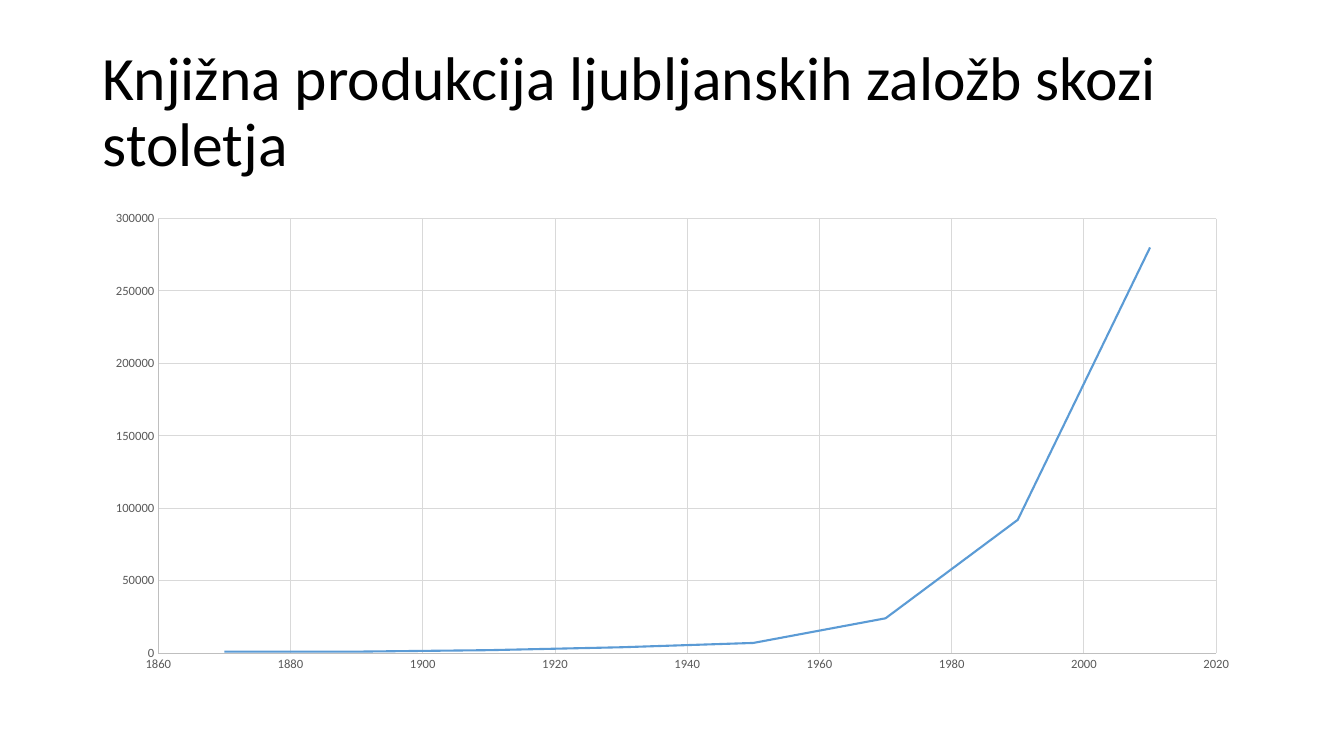
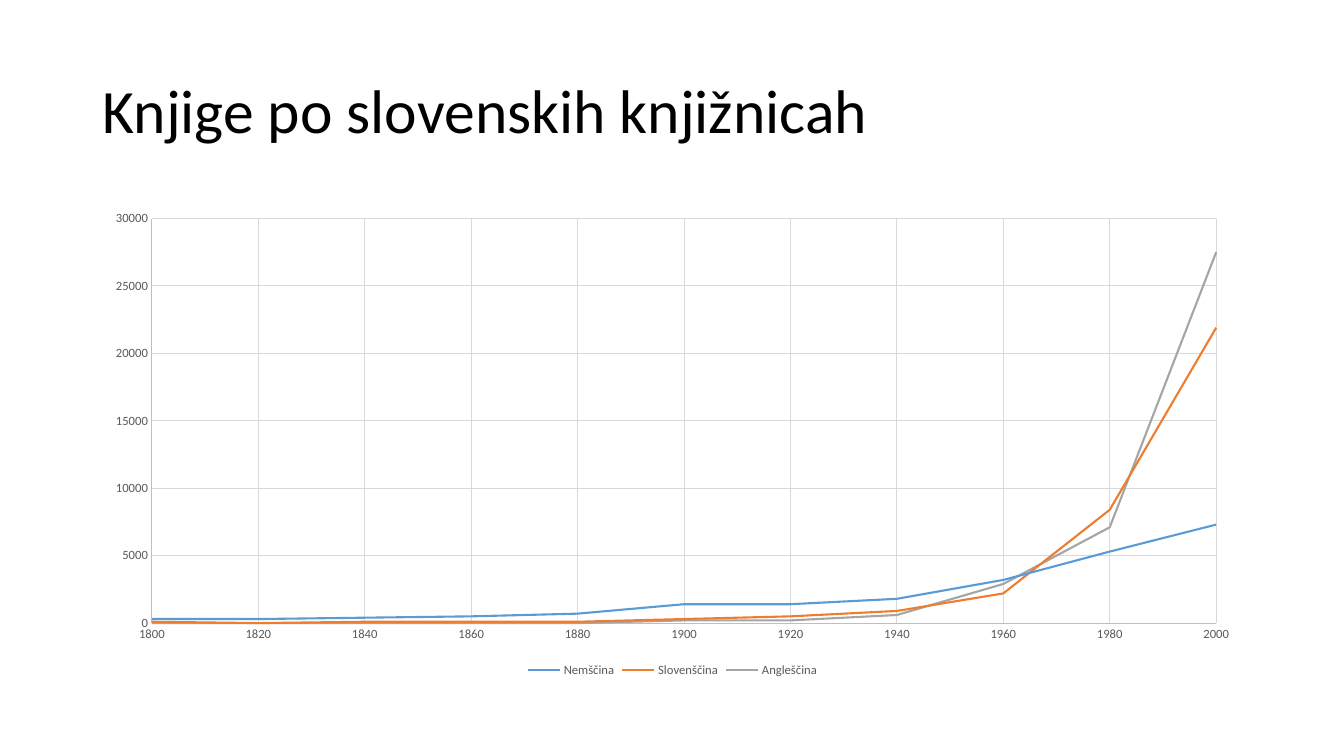
from pptx import Presentation
from pptx.chart.data import XyChartData
from pptx.dml.color import RGBColor
from pptx.enum.chart import XL_CHART_TYPE, XL_LEGEND_POSITION, XL_TICK_MARK
from pptx.enum.text import MSO_ANCHOR
from pptx.util import Inches, Pt

SMOOTH_LINES = XL_CHART_TYPE.XY_SCATTER_SMOOTH_NO_MARKERS
BOTTOM = XL_LEGEND_POSITION.BOTTOM
NO_TICK = XL_TICK_MARK.NONE
MIDDLE = MSO_ANCHOR.MIDDLE

COLORS = {
    "title": "000000", "label": "595959", "axis": "BFBFBF", "grid": "D9D9D9",
    "blue": "5B9BD5", "orange": "ED7D31", "gray": "A5A5A5",
}
SERIES_COLORS = ("blue", "orange", "gray")
FONT = "Calibri"
LEFT, WIDTH = 0.92, 11.5

PRODUCTION = {
    "Series 1": (1000, 1000, 2000, 4000, 7000, 24000, 92000, 280000),
}
LIBRARIES = {
    "Nemščina": (300, 300, 400, 500, 700, 1400, 1400, 1800, 3200, 5300, 7300),
    "Slovenščina": (100, 0, 100, 100, 100, 300, 500, 900, 2200, 8400, 21900),
    "Angleščina": (0, 0, 0, 0, 0, 200, 200, 600, 2900, 7100, 27500),
}


def set_attrs(obj, **values):
    for name, value in values.items():
        setattr(obj, name, value)


class Deck:
    """Holds the shared style and the slide being built."""

    def __init__(self):
        self.prs = Presentation()
        set_attrs(self.prs, slide_width=Inches(13.33), slide_height=Inches(7.5))
        self.slide = None

    def add_slide(self, title):
        self.slide = self.prs.slides.add_slide(self.prs.slide_layouts[6])
        self.title(title)

    def font(self, font, size, color):
        set_attrs(font, name=FONT, size=Pt(size))
        font.color.rgb = RGBColor.from_string(COLORS[color])

    def line(self, fmt, color, width=0.75):
        fmt.line.color.rgb = RGBColor.from_string(COLORS[color])
        fmt.line.width = Pt(width)

    def title(self, text):
        sp = self.slide.shapes.add_textbox(
            Inches(LEFT), Inches(0.4), Inches(WIDTH), Inches(1.45))
        tf = sp.text_frame
        set_attrs(tf, word_wrap=True, vertical_anchor=MIDDLE)
        p = tf.paragraphs[0]
        p.line_spacing = 0.9
        r = p.add_run()
        r.text = text
        self.font(r.font, 44, "title")

    def axis(self, axis):
        set_attrs(axis, has_major_gridlines=True,
                  major_tick_mark=NO_TICK, minor_tick_mark=NO_TICK)
        self.font(axis.tick_labels.font, 9, "label")
        self.line(axis.format, "axis")
        self.line(axis.major_gridlines.format, "grid")

    def chart(self, years, series, legend=False, **year_scale):
        """Draw smooth curves over years; year_scale sets the year axis limits."""
        data = XyChartData()
        for name, values in series.items():
            points = data.add_series(name)
            for year, value in zip(years, values):
                points.add_data_point(year, value)
        chart = self.slide.shapes.add_chart(
            SMOOTH_LINES, Inches(LEFT), Inches(2), Inches(WIDTH), Inches(4.76),
            data).chart
        set_attrs(chart, has_title=False, has_legend=legend)
        self.font(chart.font, 10, "title")
        for axis in (chart.category_axis, chart.value_axis):
            self.axis(axis)
        set_attrs(chart.category_axis, **year_scale)
        plot = chart.plots[0]
        plot.vary_by_categories = False
        for curve, color in zip(plot.series, SERIES_COLORS):
            self.line(curve.format, color, 1.5)
        if legend:
            set_attrs(chart.legend, position=BOTTOM, include_in_layout=False)
            self.font(chart.legend.font, 9, "label")


def main():
    deck = Deck()
    deck.add_slide("Knjižna produkcija ljubljanskih založb skozi stoletja")
    deck.chart(range(1870, 2011, 20), PRODUCTION)

    deck.add_slide("Knjige po slovenskih knjižnicah")
    deck.chart(range(1800, 2001, 20), LIBRARIES, legend=True,
               minimum_scale=1800, maximum_scale=2000)
    deck.prs.save("out.pptx")


if __name__ == "__main__":
    main()
